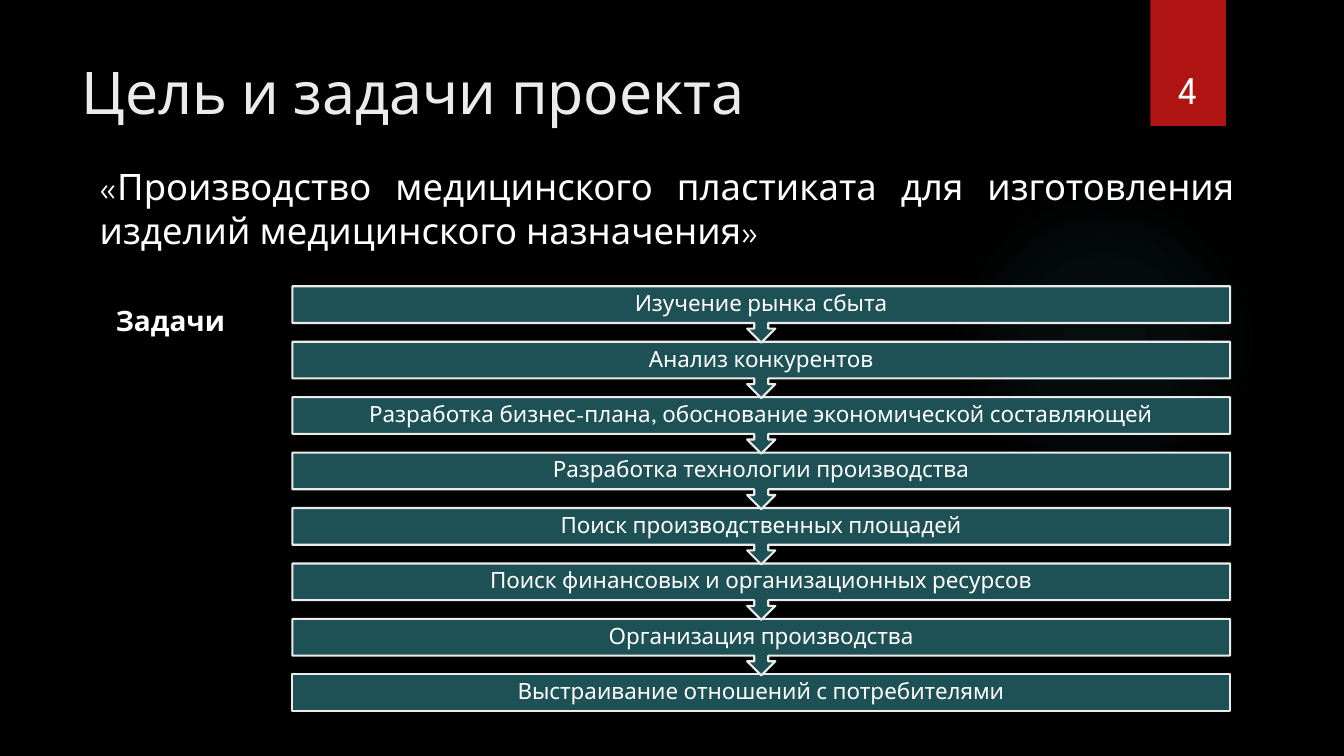
from lxml import etree
from pptx import Presentation
from pptx.dml.color import RGBColor
from pptx.enum.shapes import MSO_SHAPE
from pptx.enum.text import MSO_ANCHOR, PP_ALIGN
from pptx.oxml import parse_xml
from pptx.oxml.ns import nsdecls, qn
from pptx.util import Pt

PX = 9144
RECT, OVAL, CALL = MSO_SHAPE.RECTANGLE, MSO_SHAPE.OVAL, MSO_SHAPE.UP_ARROW_CALLOUT
TOP, MID, BASE = MSO_ANCHOR.TOP, MSO_ANCHOR.MIDDLE, MSO_ANCHOR.BOTTOM
LEFT, CENTER, FULL = PP_ALIGN.LEFT, PP_ALIGN.CENTER, PP_ALIGN.JUSTIFY
FONT, WHITE, PALE, TEAL, RED, GLOW = (
    "League Spartan", "FFFFFF", "EBEBEB", "1E5155", "B01513", "50B9C1")
STEPS = [
    "Изучение рынка сбыта",
    "Анализ конкурентов",
    "Разработка бизнес-плана, обоснование экономической составляющей",
    "Разработка технологии производства",
    "Поиск производственных площадей",
    "Поиск финансовых и организационных ресурсов",
    "Организация производства",
    "Выстраивание отношений с потребителями",
]


def color(code):
    return RGBColor.from_string(code)


class Deck:
    """Holds the style and the current slide, with a method per element."""

    def __init__(self, wide, high):
        self.prs = Presentation()
        self.prs.slide_width, self.prs.slide_height = wide * PX, high * PX
        self.slide = self.prs.slides.add_slide(self.prs.slide_layouts[6])
        back = self.slide.background.fill
        back.solid()
        back.fore_color.rgb = color("000000")

    def shape(self, kind, box, fill, line=None):
        item = self.slide.shapes.add_shape(kind, *(n * PX for n in box))
        item.shadow.inherit = False
        item.fill.solid()
        item.fill.fore_color.rgb = color(fill)
        if line:
            item.line.color.rgb = color(line)
            item.line.width = Pt(1.5)
        else:
            item.line.fill.background()
        return item

    def glow(self, box, tint, stops):
        item = self.shape(OVAL, box, tint)
        grad = parse_xml(
            f'<a:gradFill {nsdecls("a")}><a:gsLst/><a:path path="circle">'
            '<a:fillToRect l="50000" t="50000" r="50000" b="50000"/>'
            '</a:path></a:gradFill>')
        for pos, alpha in stops:
            stop = etree.SubElement(grad[0], qn("a:gs"), pos=str(pos * 1000))
            tone = etree.SubElement(stop, qn("a:srgbClr"), val=tint)
            etree.SubElement(tone, qn("a:alpha"), val=str(alpha * 1000))
        props = item.fill._xPr
        props.replace(props.find(qn("a:solidFill")), grad)

    def text(self, box, words, size, tint=WHITE, align=LEFT, anchor=TOP,
             bold=False, pad=None, space=None):
        frame = self.slide.shapes.add_textbox(*(n * PX for n in box)).text_frame
        frame.word_wrap = True
        frame.vertical_anchor = anchor
        if pad:
            frame.margin_left = frame.margin_right = pad * PX
            frame.margin_top = frame.margin_bottom = pad * PX
        para = frame.paragraphs[0]
        para.alignment = align
        para.line_spacing = space
        run = para.add_run()
        run.text = words
        run.font.name, run.font.size, run.font.bold = FONT, Pt(size), bold
        run.font.color.rgb = color(tint)

    def step(self, row, words, last):
        left, top, wide, high = 290, 284 + 55 * row, 930, 36
        if last:
            self.shape(RECT, (left, top, wide, high), TEAL, PALE)
        else:
            self.shape(CALL, (left, top, wide, 56), TEAL, PALE).rotation = 180
        self.text((left, top, wide, high), words, 16, align=CENTER,
                  anchor=MID, pad=12, space=0.9)


def main():
    deck = Deck(1333, 750)
    deck.glow((941, 183, 308, 308), GLOW, [(0, 7), (36, 6), (69, 0)])
    deck.shape(RECT, (1141, 0, 75, 125), RED)
    deck.text((71, 50, 1029, 153), "Цель и задачи проекта", 42, PALE)
    deck.text((105, 296, 185, 44), "Задачи", 20, bold=True)
    for row, words in reversed(list(enumerate(STEPS))):
        deck.step(row, words, row == len(STEPS) - 1)
    deck.text((89, 158, 1146, 98),
              "«Производство медицинского пластиката для изготовления "
              "изделий медицинского назначения»", 26, align=FULL)
    deck.text((1132, 32, 92, 84), "4", 28, align=CENTER, anchor=BASE)
    deck.prs.save("out.pptx")


if __name__ == "__main__":
    main()
